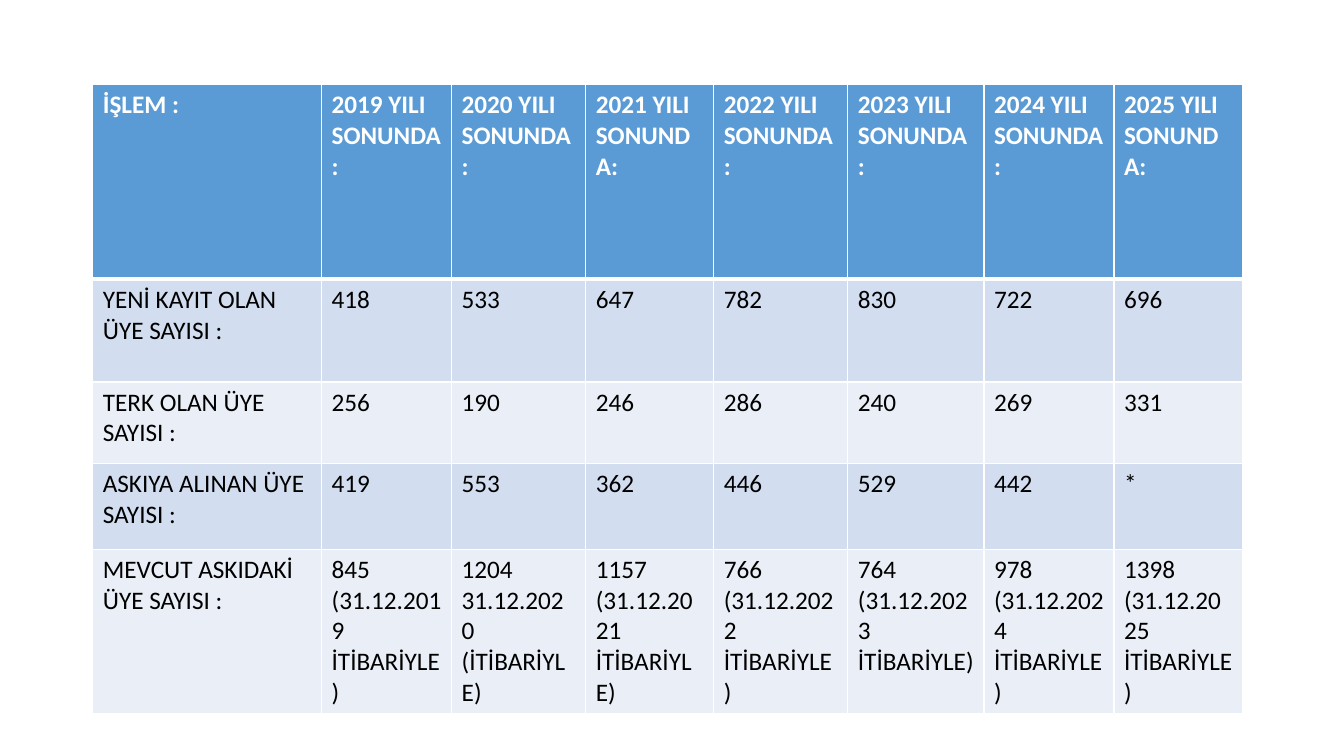
from dataclasses import dataclass

from lxml.etree import SubElement
from pptx import Presentation
from pptx.dml.color import RGBColor as Rgb
from pptx.oxml.ns import qn
from pptx.util import Inches, Pt


@dataclass(frozen=True)
class Theme:
    font: str = "Calibri"
    size: int = 18
    header_fill: str = "5B9BD5"
    band_fills: tuple = ("D2DEEF", "EAEFF7")
    header_text: str = "FFFFFF"
    body_text: str = "000000"
    border: str = "FFFFFF"
    thin: int = 1
    thick: int = 3


class MemberSlide:
    def __init__(self, slide, theme):
        self.slide = slide
        self.theme = theme

    def add_borders(self, cell, top, bottom):
        properties = cell._tc.get_or_add_tcPr()
        thin = self.theme.thin
        for side, width in (("L", thin), ("R", thin), ("T", top), ("B", bottom)):
            line = SubElement(properties, qn(f"a:ln{side}"), w=str(Pt(width)))
            fill = SubElement(line, qn("a:solidFill"))
            SubElement(fill, qn("a:srgbClr"), val=self.theme.border)

    def style_cell(self, cell, row_index):
        theme = self.theme
        is_header = row_index == 0
        self.add_borders(
            cell,
            top=theme.thick if row_index == 1 else theme.thin,
            bottom=theme.thick if is_header else theme.thin,
        )
        band = theme.band_fills[(row_index - 1) % 2]
        cell.fill.solid()
        cell.fill.fore_color.rgb = Rgb.from_string(theme.header_fill if is_header else band)
        text_color = theme.header_text if is_header else theme.body_text
        for paragraph in cell.text_frame.paragraphs:
            for run in paragraph.runs:
                run.font.name = theme.font
                run.font.size = Pt(theme.size)
                run.font.bold = is_header
                run.font.color.rgb = Rgb.from_string(text_color)

    def add_table(self, rows, left, top, widths, heights):
        table = self.slide.shapes.add_table(
            len(rows), len(widths), Inches(left), Inches(top),
            Inches(sum(widths)), Inches(sum(heights)),
        ).table
        for column, width in zip(table.columns, widths):
            column.width = Inches(width)
        for row, height in zip(table.rows, heights):
            row.height = Inches(height)
        for row_index, values in enumerate(rows):
            for column_index, value in enumerate(values):
                cell = table.cell(row_index, column_index)
                cell.text_frame.text = value
                self.style_cell(cell, row_index)


# Membership figures by year
MEMBER_ROWS = [
    ["İŞLEM :", "2019 YILI SONUNDA :", "2020 YILI SONUNDA:", "2021 YILI SONUNDA:",
     "2022 YILI SONUNDA:", "2023 YILI SONUNDA :", "2024 YILI SONUNDA :",
     "2025 YILI SONUNDA:"],
    ["YENİ KAYIT OLAN ÜYE SAYISI :", "418", "533", "647", "782", "830", "722", "696"],
    ["TERK OLAN ÜYE SAYISI :", "256", "190", "246", "286", "240", "269", "331"],
    ["ASKIYA ALINAN ÜYE SAYISI :", "419", "553", "362", "446", "529", "442", "*"],
    ["MEVCUT ASKIDAKİ ÜYE SAYISI :", "845 (31.12.2019 İTİBARİYLE)",
     "1204 31.12.2020 (İTİBARİYLE)", "1157 (31.12.2021 İTİBARİYLE)",
     "766 (31.12.2022 İTİBARİYLE)", "764 (31.12.2023 İTİBARİYLE)",
     "978 (31.12.2024 İTİBARİYLE)", "1398\n(31.12.2025 İTİBARİYLE)"],
]
COLUMN_WIDTHS = [2.27, 1.29, 1.33, 1.27, 1.33, 1.35, 1.29, 1.28]
ROW_HEIGHTS = [1.93, 1.02, 0.81, 0.85, 1.61]


def main():
    presentation = Presentation()
    presentation.slide_width = Inches(13.33)
    presentation.slide_height = Inches(7.5)
    blank_layout = presentation.slide_layouts[6]
    member_slide = MemberSlide(presentation.slides.add_slide(blank_layout), Theme())

    # Membership table
    member_slide.add_table(MEMBER_ROWS, 0.92, 0.84, COLUMN_WIDTHS, ROW_HEIGHTS)

    presentation.save("out.pptx")


if __name__ == "__main__":
    main()
